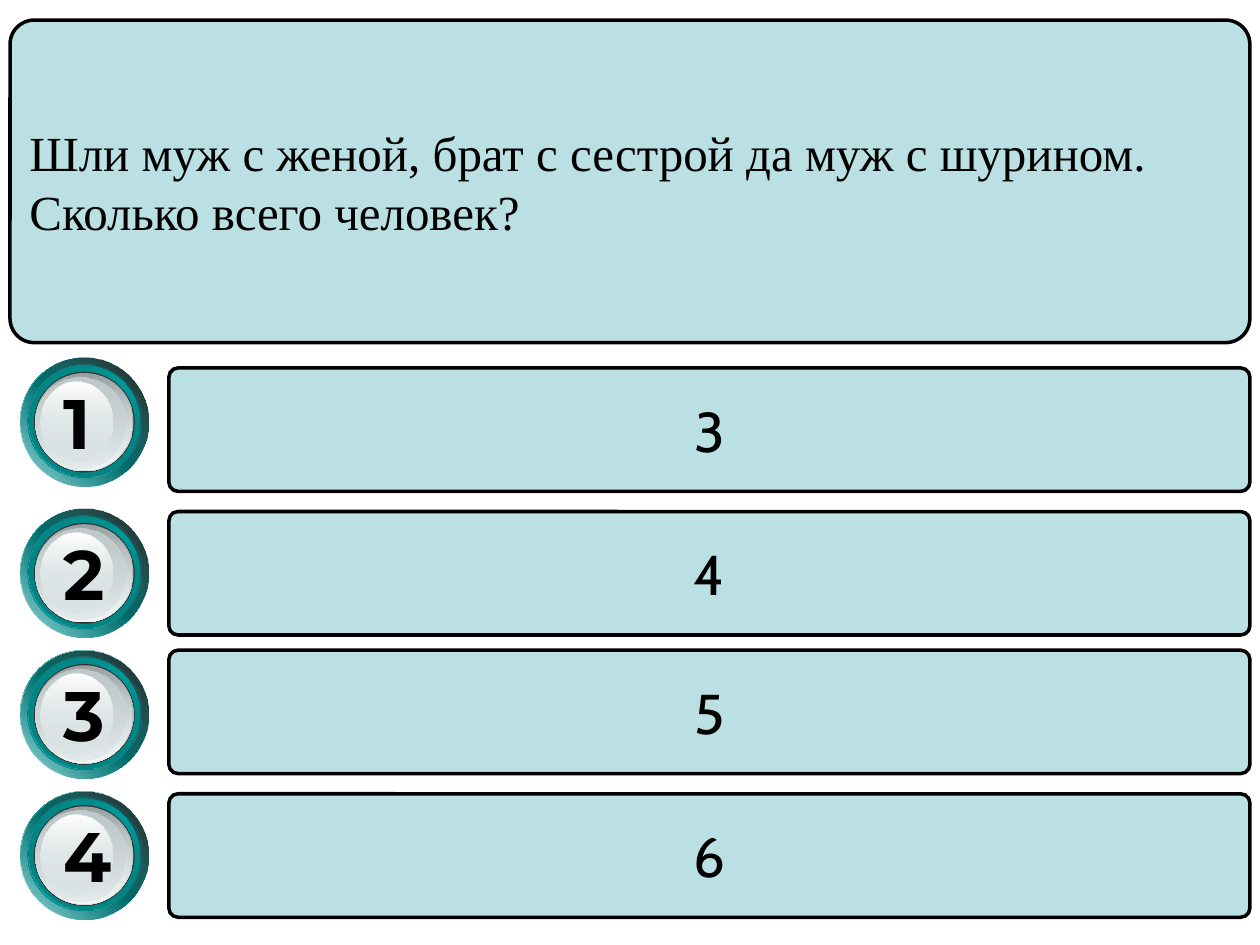
from lxml import etree
from pptx import Presentation
from pptx import util as u
from pptx.dml.color import RGBColor
from pptx.enum import shapes, text
from pptx.oxml.ns import qn

BLACK, PALE, TEAL, SILVER = "000000", "BBE0E3", "009999", "D6E1E2"

# Dial layers from back to front: offset x, offset y, width, height,
# fill (hex, or stops of position, colour, opacity), angle, turns with shape
DIAL_LAYERS = [
    (0, 0, 1.02, 1.02, [(0, "FFFFFF", 100), (50, TEAL, 100), (100, "FFFFFF", 100)], 45, 1),
    (0, 0, 1.02, 1.02, [(0, TEAL, 32), (100, BLACK, 90)], 45, 1),
    (0.06, 0.06, 0.89, 0.89, [(0, "007575", 100), (50, TEAL, 100), (100, "007575", 100)], 315, 1),
    (0.07, 0.05, 0.89, 0.89, [(0, "007E7E", 100), (100, TEAL, 0)], 45, 1),
    (0.11, 0.11, 0.8, 0.8, "333333", 0, 1),
    (0.12, 0.12, 0.78, 0.78, [(0, "99A1A2", 100), (100, SILVER, 100)], 90, 0),
    (0.12, 0.13, 0.76, 0.76, [(0, SILVER, 0), (100, "F2F5F5", 100)], 90, 0),
    (0.12, 0.16, 0.72, 0.71, [(0, "C1CBCC", 100), (100, SILVER, 48)], 90, 0),
    (0.13, 0.22, 0.64, 0.57, [(0, "FFFFFF", 100), (100, SILVER, 38)], 90, 0),
]


def color(value):
    return RGBColor.from_string(value)


class QuizSlide:
    question_font = {"name": "Times New Roman", "size": u.Pt(28), "bold": False}
    answer_font = {"name": "Cabin", "size": u.Pt(32), "bold": False}
    number_font = {"name": "Montserrat", "size": u.Pt(40), "bold": True}

    def __init__(self, deck):
        self.page = deck.slides.add_slide(deck.slide_layouts[6])

    def label(self, box, words, font, align):
        frame = box.text_frame
        frame.vertical_anchor = text.MSO_ANCHOR.MIDDLE
        para = frame.paragraphs[0]
        para.alignment = align
        span = para.add_run()
        span.text = words
        for key, value in font.items():
            setattr(span.font, key, value)
        span.font.color.rgb = color(BLACK)

    def panel(self, left, top, width, height, words, font, align):
        box = self.page.shapes.add_shape(
            shapes.MSO_SHAPE.ROUNDED_RECTANGLE,
            *map(u.Inches, (left, top, width, height)))
        box.adjustments[0] = 0.075
        box.shadow.inherit = False
        box.fill.solid()
        box.fill.fore_color.rgb = color(PALE)
        box.line.color.rgb = color(BLACK)
        box.line.width = u.Pt(2)
        self.label(box, words, font, align)
        box.text_frame.word_wrap = True

    def gradient(self, box, stops, angle, turns):
        # Stops with opacity need XML
        fill = etree.Element(qn("a:gradFill"), rotWithShape=str(turns))
        stop_list = etree.SubElement(fill, qn("a:gsLst"))
        for position, value, opacity in stops:
            stop = etree.SubElement(stop_list, qn("a:gs"), pos=str(position * 1000))
            tint = etree.SubElement(stop, qn("a:srgbClr"), val=value)
            if opacity < 100:
                etree.SubElement(tint, qn("a:alpha"), val=str(opacity * 1000))
        etree.SubElement(fill, qn("a:lin"), ang=str(angle * 60000), scaled="1")
        box.element.spPr.find(qn("a:prstGeom")).addnext(fill)

    def dial(self, left, top, number):
        group = self.page.shapes.add_group_shape()
        for dx, dy, width, height, fill, angle, turns in DIAL_LAYERS:
            disc = group.shapes.add_shape(
                shapes.MSO_SHAPE.OVAL,
                *map(u.Inches, (left + dx, top + dy, width, height)))
            disc.rotation = 270
            disc.shadow.inherit = False
            disc.line.fill.background()
            if isinstance(fill, str):
                disc.fill.solid()
                disc.fill.fore_color.rgb = color(fill)
            else:
                self.gradient(disc, fill, angle, turns)
        # The front disc carries the number, turned upright
        self.label(disc, number, self.number_font, text.PP_ALIGN.LEFT)
        disc.text_frame.word_wrap = False
        disc.element.txBody.find(qn("a:bodyPr")).set("vert", "eaVert")


def main():
    deck = Presentation()
    deck.slide_width, deck.slide_height = u.Inches(10), u.Inches(7.5)
    quiz = QuizSlide(deck)

    # Question
    quiz.panel(0.08, 0.16, 9.84, 2.56,
               "Шли муж с женой, брат с сестрой да муж с шурином. "
               "Сколько всего человек?",
               quiz.question_font, text.PP_ALIGN.LEFT)

    # Answers
    for top, answer in zip((2.92, 4.06, 5.16, 6.3), "3456"):
        quiz.panel(1.34, top, 8.58, 0.98, answer,
                   quiz.answer_font, text.PP_ALIGN.CENTER)

    # Numbered dials
    for top, number in zip((2.84, 4.04, 5.16, 6.28), "1234"):
        quiz.dial(0.16, top, number)

    deck.save("out.pptx")


if __name__ == "__main__":
    main()
